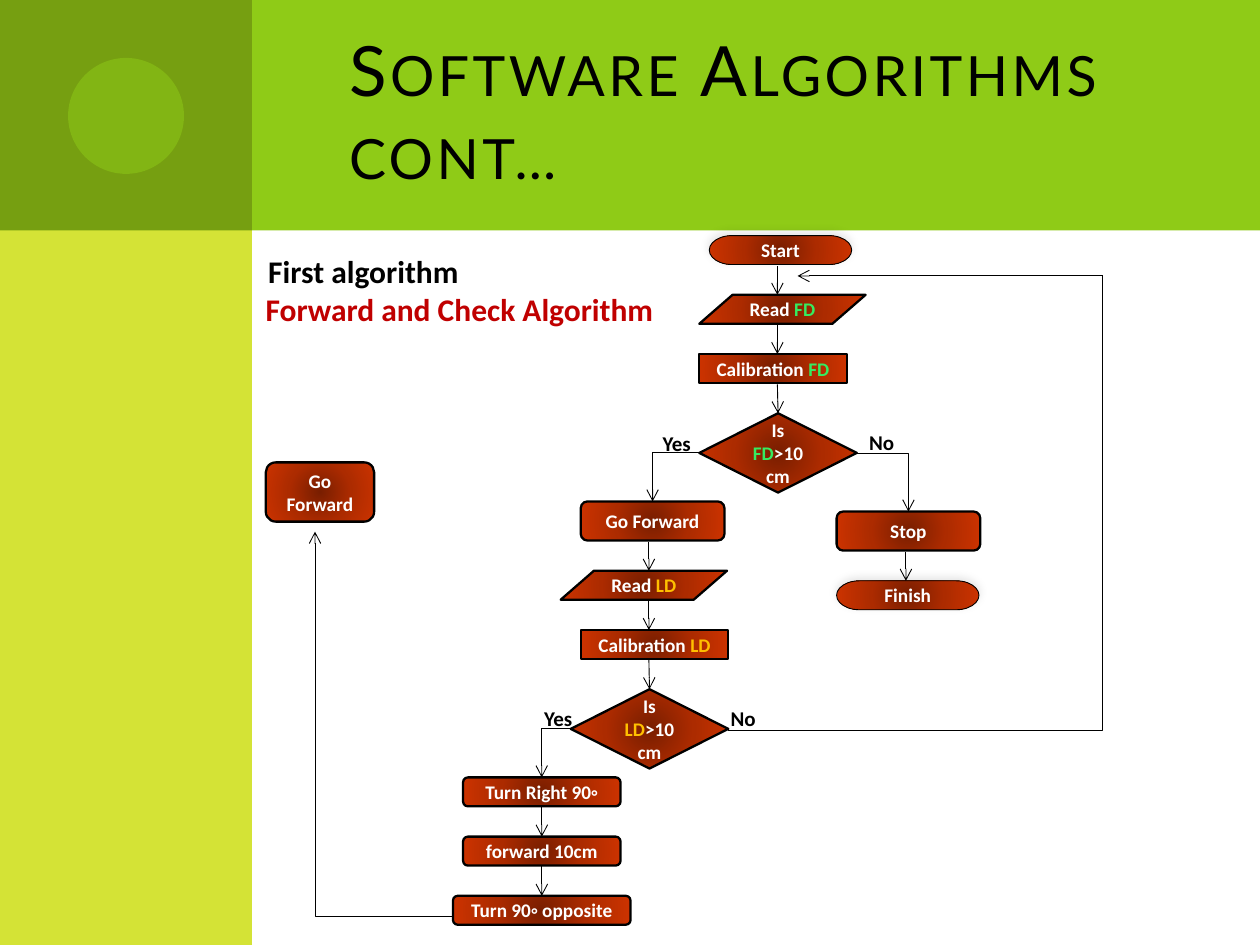
from pptx import Presentation
from pptx.dml.color import RGBColor
from pptx.enum.shapes import MSO_CONNECTOR, MSO_SHAPE
from pptx.enum.text import MSO_ANCHOR, MSO_AUTO_SIZE, PP_ALIGN
from pptx.oxml import parse_xml
from pptx.oxml.ns import nsdecls, qn
from pptx.util import Inches, Pt

STRAIGHT, ELBOW = MSO_CONNECTOR.STRAIGHT, MSO_CONNECTOR.ELBOW
RECT, OVAL = MSO_SHAPE.RECTANGLE, MSO_SHAPE.OVAL
TERMINATOR = MSO_SHAPE.FLOWCHART_TERMINATOR
DATA = MSO_SHAPE.FLOWCHART_DATA
PROCESS = MSO_SHAPE.FLOWCHART_PROCESS
ACTION = MSO_SHAPE.FLOWCHART_ALTERNATE_PROCESS
DECISION = MSO_SHAPE.FLOWCHART_DECISION
TOP, LEFT, BOTTOM, RIGHT = range(4)

COLORS = {
    "header": "8FCB17", "sidebar": "D4E336", "corner": "769F11",
    "black": "000000", "white": "FFFFFF", "red": "C00000",
    "front": "35EC60", "lateral": "FFC000",
    "core": "791E00", "middle": "AC2B00", "rim": "CC3300",
}
ROW = 0.23  # height of the low boxes and length of the short arrows


def rgb(name):
    return RGBColor.from_string(COLORS[name])


def style_span(span, size, color, font="Calibri", bold=True):
    span.font.name = font
    span.font.size = Pt(size)
    span.font.bold = bold
    span.font.color.rgb = rgb(color)


def add_band(slide, kind, place, color, opacity=None):
    band = slide.shapes.add_shape(kind, *map(Inches, place))
    band.shadow.inherit = False
    band.fill.solid()
    band.fill.fore_color.rgb = rgb(color)
    band.line.fill.background()
    if opacity:
        tint = next(band._element.spPr.iter(qn("a:srgbClr")))
        tint.append(parse_xml(f'<a:alpha {nsdecls("a")} val="{opacity * 1000}"/>'))


def format_title(slide):
    title = slide.shapes.title
    title.left, title.top = Inches(2.67), Inches(0.25)
    title.width, title.height = Inches(6.83), Inches(1.25)
    frame = title.text_frame
    frame.text = "Software Algorithms cont…"
    frame.word_wrap = True
    frame.auto_size = MSO_AUTO_SIZE.NONE
    frame.vertical_anchor = MSO_ANCHOR.MIDDLE
    para = frame.paragraphs[0]
    para.alignment = PP_ALIGN.LEFT
    span = para.runs[0]
    style_span(span, 39.6, "black", "Lato", False)
    properties = span.font._element
    properties.set("cap", "small")
    properties.set("spc", "200")
    # Keep the title in front of the bands
    slide.shapes._spTree.append(title._element)


def add_label(slide, place, text, size, color="black", wrap=True):
    box = slide.shapes.add_textbox(*map(Inches, place))
    box.text_frame.text = text
    box.text_frame.word_wrap = wrap
    style_span(box.text_frame.paragraphs[0].runs[0], size, color)


def fill_radial(shape):
    stops = "".join(
        f'<a:gs pos="{position}"><a:srgbClr val="{COLORS[name]}"/></a:gs>'
        for position, name in ((0, "core"), (50000, "middle"), (100000, "rim")))
    gradient = parse_xml(
        f'<a:gradFill {nsdecls("a")} rotWithShape="1"><a:gsLst>{stops}</a:gsLst>'
        '<a:path path="circle"><a:fillToRect l="50000" t="50000" r="50000" b="50000"/>'
        '</a:path></a:gradFill>')
    shape._element.spPr.find(qn("a:prstGeom")).addnext(gradient)


def add_soft_shadow(shape):
    effects = shape._element.spPr.find(qn("a:effectLst"))
    effects.append(parse_xml(
        f'<a:outerShdw {nsdecls("a")} blurRad="{Pt(5)}" dist="{Pt(2)}" dir="16020000" '
        f'rotWithShape="0"><a:srgbClr val="{COLORS["black"]}"><a:alpha val="10000"/>'
        '</a:srgbClr></a:outerShdw>'))


def add_step(slide, kind, place, *spans):
    """Add a flowchart box; each span is a (text, color) pair."""
    step = slide.shapes.add_shape(kind, *map(Inches, place))
    fill_radial(step)
    step.shadow.inherit = False
    step.line.color.rgb = rgb("black")
    step.line.width = Pt(0.5 if kind == TERMINATOR else 1.29)
    if kind == TERMINATOR:
        add_soft_shadow(step)
    frame = step.text_frame
    frame.word_wrap = True
    frame.vertical_anchor = MSO_ANCHOR.MIDDLE
    para = frame.paragraphs[0]
    para.alignment = PP_ALIGN.CENTER
    for text, color in spans:
        span = para.add_run()
        span.text = text
        style_span(span, 11, color)
    return step


def add_flow(slide, start, end, source=None, target=None, kind=STRAIGHT, arrow=True):
    """Join two points; source and target are (step, side) pairs."""
    flow = slide.shapes.add_connector(kind, *map(Inches, (*start, *end)))
    if source:
        flow.begin_connect(*source)
    if target:
        flow.end_connect(*target)
    flow.line.color.rgb = rgb("black")
    flow.line.width = Pt(0.5)
    properties = flow._element.spPr
    if kind == ELBOW:  # one bend: across, then up or down
        properties.find(qn("a:prstGeom")).set("prst", "bentConnector2")
    if arrow:
        properties.find(qn("a:ln")).append(
            parse_xml(f'<a:tailEnd {nsdecls("a")} type="arrow"/>'))
    properties.append(parse_xml(f'<a:effectLst {nsdecls("a")}/>'))


def add_check(slide, left, top, sensor, color):
    """Add read, calibration and decision boxes for one sensor."""
    read_left = left if sensor == "FD" else left - 0.16
    add_step(slide, DATA, (read_left, top, 1.32, ROW), ("Read ", "white"), (sensor, color))
    add_step(slide, PROCESS, (left, top + 0.47, 1.17, ROW),
             ("Calibration ", "white"), (sensor, color))
    decision_left = left if sensor == "FD" else left - 0.08
    decision = add_step(slide, DECISION, (decision_left, top + 0.94, 1.25, 0.63),
                        ("Is ", "white"), (sensor, color), (">10cm", "white"))
    # Arrows into the three boxes
    center = decision_left + 0.62
    for step in range(3):
        bottom = top + 0.47 * step
        target = (decision, TOP) if step == 2 else None
        add_flow(slide, (center, bottom - ROW), (center, bottom), target=target)
    return decision


def main():
    deck = Presentation()
    deck.slide_width, deck.slide_height = Inches(10), Inches(7.5)
    slide = deck.slides.add_slide(deck.slide_layouts[5])

    # Background bands and title
    add_band(slide, RECT, (0.5, 0, 9.5, 1.83), "header")
    add_band(slide, RECT, (0, 0, 2, 7.5), "sidebar")
    add_band(slide, RECT, (0, 0, 2, 1.83), "corner")
    add_band(slide, OVAL, (0.54, 0.46, 0.92, 0.92), "header", 50)
    format_title(slide)

    # Headings
    add_label(slide, (2.03, 1.95, 1.72, 0.4), "First algorithm", 18, wrap=False)
    add_label(slide, (2.01, 2.25, 3.3, 0.4), "Forward and Check Algorithm", 18, "red", False)

    # Front distance check
    add_step(slide, TERMINATOR, (5.63, 1.87, 1.13, ROW), ("Start", "white"))
    front = add_check(slide, 5.55, 2.34, "FD", "front")

    # Front distance outcomes
    forward = add_step(slide, ACTION, (4.61, 3.98, 1.14, 0.31), ("Go Forward", "white"))
    stop = add_step(slide, ACTION, (6.64, 4.06, 1.14, 0.31), ("Stop", "white"))
    add_step(slide, TERMINATOR, (6.64, 4.61, 1.13, ROW), ("Finish", "white"))
    add_flow(slide, (5.55, 3.59), (5.16, 3.98), (front, LEFT), (forward, TOP), ELBOW)
    add_flow(slide, (6.8, 3.59), (7.19, 4.06), (front, RIGHT), (stop, TOP), ELBOW)
    add_flow(slide, (7.19, 4.38), (7.19, 4.61))

    # Lateral distance check
    lateral = add_check(slide, 4.61, 4.53, "LD", "lateral")

    # Turning sequence
    turns = [
        add_step(slide, ACTION, (4.3 - width / 2, 6.17 + 0.47 * row, width, ROW), (text, "white"))
        for row, (text, width) in enumerate(
            (("Turn Right 90◦", 1.25), ("forward 10cm", 1.25), ("Turn 90◦ opposite", 1.41)))
    ]
    add_flow(slide, (4.53, 5.78), (4.3, 6.17), (lateral, LEFT), (turns[0], TOP), ELBOW)
    for upper, lower in zip(turns, turns[1:]):
        add_flow(slide, (4.3, 6.4), (4.3, 6.64), (upper, BOTTOM), (lower, TOP))

    # Way back to the forward step
    add_step(slide, ACTION, (2.11, 3.67, 0.86, 0.47), ("Go Forward", "white"))
    add_flow(slide, (3.59, 7.27), (2.5, 4.45), kind=ELBOW, arrow=False)
    add_flow(slide, (2.5, 4.45), (2.5, 4.22))

    # Loop back to the first reading
    add_flow(slide, (5.78, 5.8), (8.75, 2.19), kind=ELBOW, arrow=False)
    add_flow(slide, (8.75, 2.19), (6.33, 2.19))

    # Branch labels
    for left, top, text in ((5.16, 3.37, "Yes"), (6.8, 3.36, "No"),
                            (4.22, 5.55, "Yes"), (5.7, 5.55, "No")):
        add_label(slide, (left, top, 0.55, 0.3), text, 12)

    deck.save("out.pptx")


if __name__ == "__main__":
    main()
